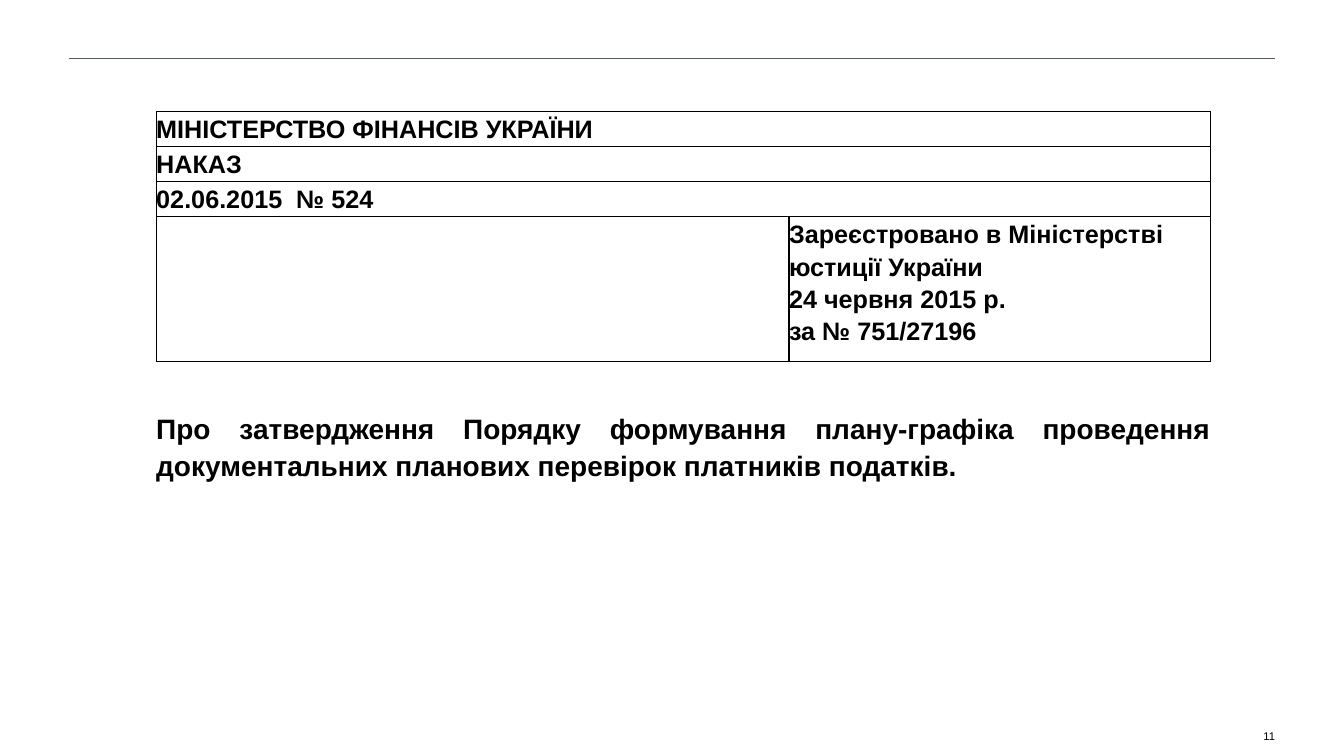
import pptx
import pptx.util
import pptx.dml.color
import pptx.enum.shapes
import pptx.enum.text
import pptx.oxml
import pptx.oxml.ns
from dataclasses import dataclass

Pt = pptx.util.Pt
Align = pptx.enum.text.PP_ALIGN
Anchor = pptx.enum.text.MSO_ANCHOR


@dataclass(frozen=True)
class Theme:
    font: str = "Arial"
    ink: str = "000000"
    rule: str = "515D69"
    statement_size: int = 20
    table_size: int = 18
    number_size: int = 8


theme = Theme()


def style_paragraph(paragraph, size, bold, align):
    paragraph.alignment = align
    for target in [paragraph, *paragraph.runs]:
        target.font.name = theme.font
        target.font.size = Pt(size)
        target.font.bold = bold
        target.font.color.rgb = pptx.dml.color.RGBColor.from_string(theme.ink)


def add_text(slide, box, text, size, bold, align, anchor, wrap):
    shape = slide.shapes.add_textbox(*[Pt(length) for length in box])
    frame = shape.text_frame
    frame.margin_left = frame.margin_right = frame.margin_top = frame.margin_bottom = 0
    frame.word_wrap = wrap
    frame.vertical_anchor = anchor
    frame.text = text
    style_paragraph(frame.paragraphs[0], size, bold, align)
    return frame.paragraphs[0]


presentation = pptx.Presentation()
presentation.slide_width = Pt(960)
presentation.slide_height = Pt(540)
slide = presentation.slides.add_slide(presentation.slide_layouts[6])

header_rule = slide.shapes.add_connector(
    pptx.enum.shapes.MSO_CONNECTOR.STRAIGHT, Pt(49), Pt(41.5), Pt(911), Pt(41.5)
)
header_rule.line.color.rgb = pptx.dml.color.RGBColor.from_string(theme.rule)
header_rule.line.width = Pt(0.75)
header_rule._element.spPr.append(pptx.oxml.parse_xml(
    f'<a:effectLst {pptx.oxml.ns.nsdecls("a")}/>'
))

statement = add_text(
    slide, (111.6, 292.3, 753.1, 61.2),
    "Про затвердження Порядку формування плану-графіка проведення "
    "документальних планових перевірок платників податків.",
    theme.statement_size, True, Align.JUSTIFY, Anchor.TOP, True,
)
statement.line_spacing = 1.08
statement.space_after = Pt(12)

add_text(
    slide, (900.7, 521.3, 10.1, 9.4), "11",
    theme.number_size, False, Align.RIGHT, Anchor.MIDDLE, False,
)

order_rows = [
    ("МІНІСТЕРСТВО ФІНАНСІВ УКРАЇНИ", ""),
    ("НАКАЗ", ""),
    ("02.06.2015  № 524", ""),
    ("", "Зареєстровано в Міністерстві\vюстиції України\v24 червня 2015 р.\vза № 751/27196"),
]
column_widths = [452, 301.1]
row_heights = [25, 25, 25, 103.7]

table = slide.shapes.add_table(
    len(row_heights), len(column_widths), Pt(111.6), Pt(79.8),
    Pt(sum(column_widths)), Pt(sum(row_heights)),
).table
table.first_row = table.horz_banding = False
for column, width in zip(table.columns, column_widths):
    column.width = Pt(width)

for row_index, (texts, height) in enumerate(zip(order_rows, row_heights)):
    table.rows[row_index].height = Pt(height)
    for column_index, text in enumerate(texts):
        cell = table.cell(row_index, column_index)
        cell.margin_left = cell.margin_right = cell.margin_top = cell.margin_bottom = 0
        cell.text_frame.text = text
        paragraph = cell.text_frame.paragraphs[0]
        style_paragraph(paragraph, theme.table_size, True, Align.LEFT)
        paragraph.line_spacing = 1.15
        paragraph.space_after = Pt(8)
        for edge in ("lnL", "lnR", "lnT", "lnB"):
            cell._tc.get_or_add_tcPr().append(pptx.oxml.parse_xml(
                f'<a:{edge} {pptx.oxml.ns.nsdecls("a")} w="{Pt(1)}"><a:solidFill>'
                f'<a:srgbClr val="{theme.ink}"/></a:solidFill></a:{edge}>'
            ))
        cell.fill.background()
    if texts[0]:
        table.cell(row_index, 0).merge(table.cell(row_index, 1))

presentation.save("out.pptx")
